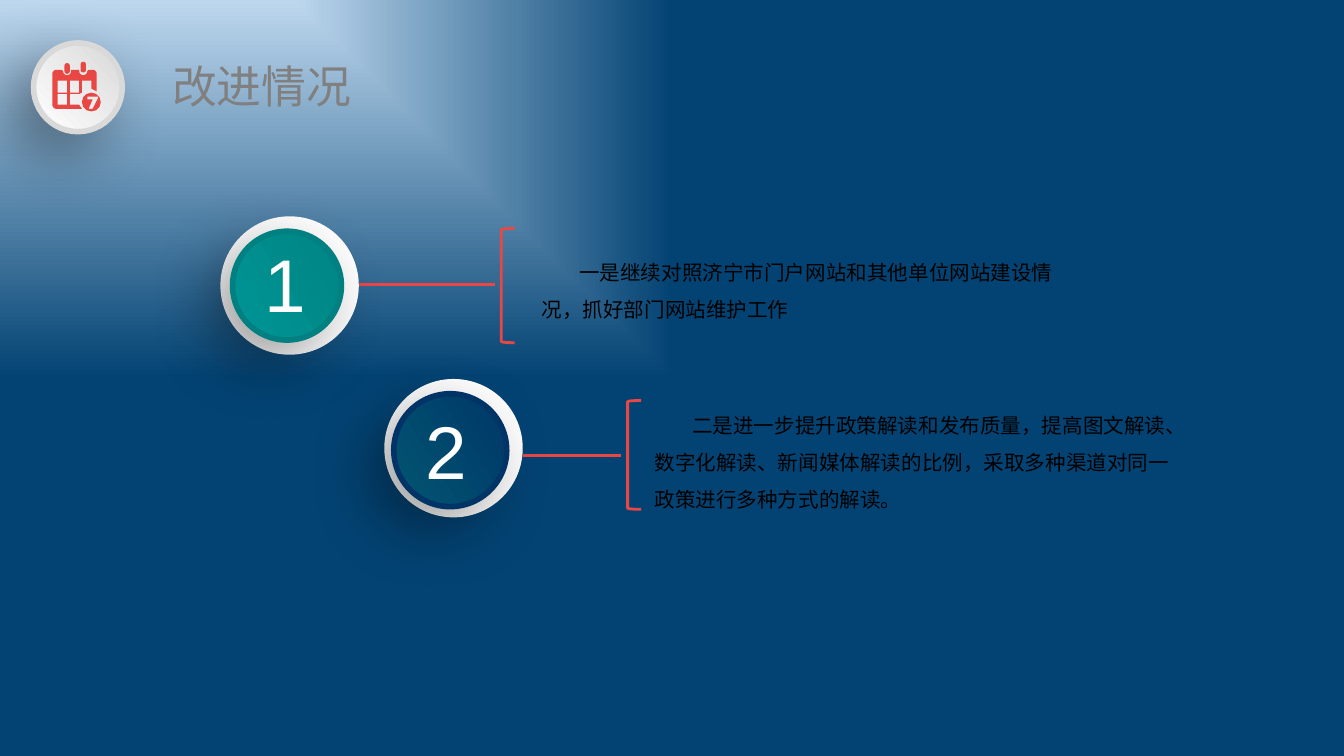
import math
from dataclasses import dataclass
from typing import NamedTuple

import pptx
import pptx.dml.color
import pptx.enum.shapes
import pptx.enum.text
import pptx.oxml
import pptx.oxml.ns
import pptx.util

SHAPE = pptx.enum.shapes.MSO_SHAPE
Point = tuple[float, float]
Contour = list[Point]


@dataclass(frozen=True)
class Theme:
    font: str = "Arial"
    sky: str = "BDD7EE"
    deep: str = "034373"
    title: str = "808080"
    body: str = "000000"
    white: str = "FFFFFF"
    silver: str = "D9D9D9"
    accent: str = "E94744"
    title_size: float = 24
    body_size: float = 11
    number_size: float = 40
    rule: float = 1.5
    rim: float = 3


class Area(NamedTuple):
    """A place on a square grid that is 100 columns wide and 56.25 rows high."""
    col: float
    row: float
    cols: float
    rows: float


@dataclass(frozen=True)
class Step:
    number: str
    text: str
    light: str
    dark: str
    ring: Area
    disc: Area
    digit: Area
    rule_row: float
    rule_end: float
    bracket: Area
    body: Area


THEME = Theme()
CELL = 0.1
ICON_DISC = Area(2.5, 3.2, 6.6, 6.6)
TITLE = Area(11.8, 3.9, 25.8, 5)
STEPS = [
    Step("1", "一是继续对照济宁市门户网站和其他单位网站建设情况，抓好部门网站维护工作",
         "009999", "008080", Area(16.4, 16.1, 10.3, 10.3), Area(17.3, 17.2, 8.1, 8.1),
         Area(18.7, 17.2, 6.2, 7.7), 21.2, 36.8, Area(37.3, 17, 1, 8.5),
         Area(40.3, 18.4, 39.3, 6.5)),
    Step("2", "二是进一步提升政策解读和发布质量，提高图文解读、数字化解读、新闻媒体解读的比例，"
         "采取多种渠道对同一政策进行多种方式的解读。",
         "015A74", "003366", Area(28.6, 28.2, 10.3, 10.3), Area(29.3, 29.3, 8.4, 8.4),
         Area(30.7, 29.6, 6.5, 7.7), 33.9, 46.2, Area(46.7, 29.8, 1, 8.1),
         Area(48.7, 29.8, 38.5, 8.3)),
]


def grid(cells: float) -> int:
    return pptx.util.Inches(cells * CELL)


def rgb(value: str):
    return pptx.dml.color.RGBColor.from_string(value)


def element(tag: str, **values):
    made = pptx.oxml.xmlchemy.OxmlElement(tag)
    for name, value in values.items():
        made.set(name, str(value))
    return made


def place(item, area: Area) -> None:
    for name, cells in zip(("left", "top", "width", "height"), area):
        setattr(item, name, grid(cells))


def write(item, text: str, size: float, color: str, inset: float = 0.1, indent: float = 0,
          **paragraph_format) -> None:
    """Fill a text holder with one unbulleted paragraph, set from the top left."""
    frame = item.text_frame
    frame_format = {"word_wrap": True, "auto_size": pptx.enum.text.MSO_AUTO_SIZE.NONE,
                    "vertical_anchor": pptx.enum.text.MSO_ANCHOR.TOP,
                    "margin_left": pptx.util.Inches(inset),
                    "margin_right": pptx.util.Inches(inset),
                    "margin_top": pptx.util.Inches(inset / 2),
                    "margin_bottom": pptx.util.Inches(inset / 2)}
    for name, value in frame_format.items():
        setattr(frame, name, value)
    frame.text = text
    paragraph = frame.paragraphs[0]
    paragraph_format = {"alignment": pptx.enum.text.PP_ALIGN.LEFT,
                        "space_before": pptx.util.Pt(0)} | paragraph_format
    for name, value in paragraph_format.items():
        setattr(paragraph, name, value)
    properties = paragraph._p.get_or_add_pPr()
    properties.set("marL", "0")
    properties.set("indent", str(pptx.util.Inches(indent)))
    properties.append(element("a:buNone"))
    font = paragraph.runs[0].font
    for name, value in {"name": THEME.font, "size": pptx.util.Pt(size), "bold": False}.items():
        setattr(font, name, value)
    font.color.rgb = rgb(color)


def shade(fill, start: str, end: str) -> None:
    fill.gradient()
    for stop, color in zip(fill.gradient_stops, (start, end)):
        stop.color.rgb = rgb(color)


def paint_background(slide) -> None:
    """Spread light from the top left corner."""
    shade(slide.background.fill, THEME.sky, THEME.deep)
    gradient = slide._element.xpath("./p:cSld/p:bg/p:bgPr/a:gradFill")[0]
    gradient.remove(gradient.find(pptx.oxml.ns.qn("a:lin")))
    glow = element("a:path", path="rect")
    glow.append(element("a:fillToRect", r=100000, b=100000))
    gradient.append(glow)
    gradient.append(element("a:tileRect", l=-100000, t=-100000))


def draw_shape(slide, kind, area: Area):
    shape = slide.shapes.add_shape(kind, *(grid(cells) for cells in area))
    shape.shadow.inherit = False
    return shape


def draw_disc(slide, area: Area, start: str, end: str, rim: str, angle: float,
              rotation: float = 0) -> None:
    """Draw a shaded circle that throws a soft shadow to the lower left."""
    disc = draw_shape(slide, SHAPE.OVAL, area)
    disc.rotation = rotation
    shade(disc.fill, start, end)
    disc.fill.gradient_angle = angle
    disc.line.color.rgb = rgb(rim)
    disc.line.width = pptx.util.Pt(THEME.rim)
    shadow = element("a:outerShdw", blurRad=pptx.util.Pt(35), dist=pptx.util.Pt(15),
                     dir=135 * 60000, algn="ctr", rotWithShape=0)
    tint = element("a:srgbClr", val="000000")
    tint.append(element("a:alpha", val=40000))
    shadow.append(tint)
    disc._element.spPr.find(pptx.oxml.ns.qn("a:effectLst")).append(shadow)


def arc(x: float, y: float, radius: float, start: int, end: int) -> Contour:
    """Points round a centre, in degrees clockwise from the right."""
    angles = (math.radians(start + (end - start) * i / 12) for i in range(13))
    return [(x + radius * math.cos(a), y + radius * math.sin(a)) for a in angles]


def box(left: float, top: float, right: float, bottom: float) -> Contour:
    return [(left, top), (right, top), (right, bottom), (left, bottom)]


def pin(x: float, top: float) -> Contour:
    return arc(x, top + 0.02, 0.02, 180, 360) + arc(x, top + 0.06, 0.02, 0, 180)


def draw_calendar(slide) -> None:
    page = (arc(0.42, 0.55, 0.03, 270, 180) + arc(0.42, 0.78, 0.03, 180, 90)
            + [(0.61, 0.81), (0.59, 0.78), (0.52, 0.78), (0.52, 0.7), (0.59, 0.7),
               (0.61, 0.69), (0.61, 0.6), (0.68, 0.6), (0.68, 0.66), (0.72, 0.68)]
            + arc(0.69, 0.55, 0.03, 0, -90)
            + [(0.66, 0.52)] + arc(0.62, 0.53, 0.03, 0, 180) + [(0.59, 0.52)]
            + [(0.53, 0.52)] + arc(0.5, 0.53, 0.03, 0, 180) + [(0.46, 0.52)])
    seven = [(0.65, 0.72), (0.73, 0.72), (0.73, 0.73), (0.69, 0.81), (0.66, 0.81),
             (0.69, 0.74), (0.65, 0.74)]
    contours = [page, pin(0.62, 0.46), pin(0.5, 0.47), box(0.43, 0.6, 0.5, 0.69),
                box(0.52, 0.6, 0.59, 0.69), box(0.43, 0.7, 0.5, 0.78),
                arc(0.68, 0.76, 0.07, 0, 360), seven]
    mils = [[(x * 1000, y * 1000) for x, y in contour] for contour in contours]
    builder = slide.shapes.build_freeform(*mils[0][0], scale=pptx.util.Inches(1) / 1000)
    builder.add_line_segments(mils[0][1:])
    for contour in mils[1:]:
        builder.move_to(*contour[0])
        builder.add_line_segments(contour[1:])
    calendar = builder.convert_to_shape()
    calendar.shadow.inherit = False
    calendar.fill.solid()
    calendar.fill.fore_color.rgb = rgb(THEME.accent)
    calendar.line.fill.background()


def draw_step(slide, step: Step, body) -> None:
    ring = draw_shape(slide, SHAPE.OVAL, step.ring)
    ring.fill.solid()
    ring.fill.fore_color.rgb = rgb(THEME.white)
    ring.line.fill.background()

    rule = slide.shapes.add_connector(
        pptx.enum.shapes.MSO_CONNECTOR.STRAIGHT, grid(step.ring.col + step.ring.cols),
        grid(step.rule_row), grid(step.rule_end), grid(step.rule_row))
    rule._element.spPr.append(element("a:effectLst"))
    bracket = draw_shape(slide, SHAPE.LEFT_BRACKET, step.bracket)
    bracket.fill.background()
    for mark in (rule, bracket):
        mark.line.color.rgb = rgb(THEME.accent)
        mark.line.width = pptx.util.Pt(THEME.rule)

    draw_disc(slide, step.disc, step.light, step.dark, step.dark, angle=190, rotation=158)
    digit = slide.shapes.add_textbox(*(grid(cells) for cells in step.digit))
    write(digit, step.number, THEME.number_size, THEME.white)
    place(body, step.body)
    write(body, step.text, THEME.body_size, THEME.body, inset=0, indent=0.28, line_spacing=1.5)


def main() -> None:
    deck = pptx.Presentation()
    deck.slide_width, deck.slide_height = grid(100), grid(56.25)
    slide = deck.slides.add_slide(deck.slide_layouts.get_by_name("Two Content"))
    paint_background(slide)
    title, *bodies = slide.placeholders
    place(title, TITLE)
    write(title, "改进情况", THEME.title_size, THEME.title)
    draw_disc(slide, ICON_DISC, THEME.white, THEME.silver, THEME.silver, angle=45)
    draw_calendar(slide)
    for step, body in zip(STEPS, bodies):
        draw_step(slide, step, body)
    deck.save("out.pptx")


if __name__ == "__main__":
    main()
